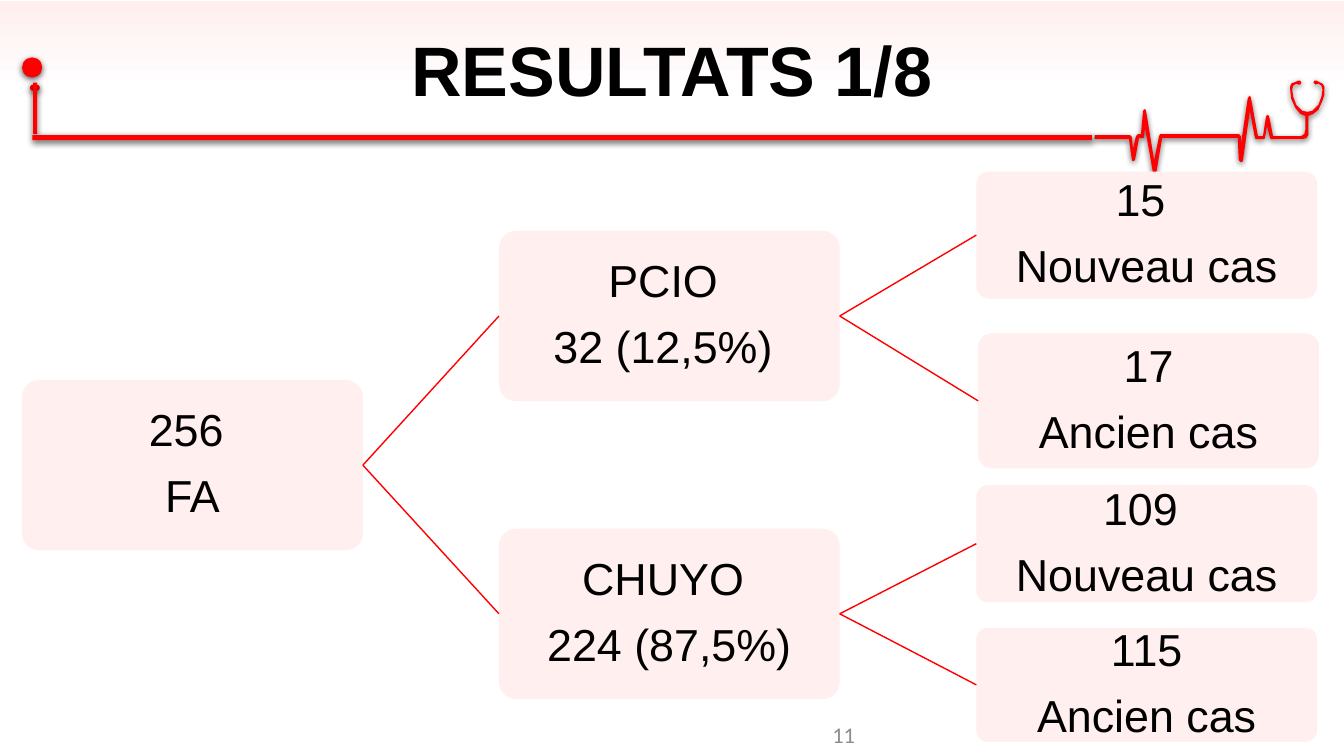
from lxml import etree
from pptx import Presentation
from pptx.dml.color import RGBColor
from pptx.enum.shapes import MSO_CONNECTOR, MSO_SHAPE
from pptx.enum.text import MSO_ANCHOR, PP_ALIGN
from pptx.oxml import parse_xml
from pptx.oxml.ns import nsdecls, qn
from pptx.util import Pt

RED = RGBColor(0xFF, 0x00, 0x00)
PINK = RGBColor(0xFF, 0xEF, 0xEF)
WHITE = RGBColor(0xFF, 0xFF, 0xFF)
BLACK = RGBColor(0x00, 0x00, 0x00)
GRAY = RGBColor(0x8C, 0x8C, 0x8C)

SHADOW = (
    f'<a:effectLst {nsdecls("a")}>'
    '<a:outerShdw blurRad="57150" dist="19050" dir="5400000" algn="ctr" rotWithShape="0">'
    '<a:srgbClr val="000000"><a:alpha val="63000"/></a:srgbClr>'
    '</a:outerShdw></a:effectLst>'
)

BOX_WIDTH = 243.4
BRANCH_HEIGHT = 121.7
BOXES = {
    "total": (15.8, 271.4, BRANCH_HEIGHT, "256 \nFA"),
    "pcio": (356.4, 164.9, BRANCH_HEIGHT, "PCIO \n32 (12,5%) "),
    "chuyo": (356.4, 377.6, BRANCH_HEIGHT, "CHUYO \n224 (87,5%)"),
    "pcio_new": (697.4, 122.6, 90.7, "15 \nNouveau cas"),
    "pcio_old": (698.7, 238.1, 96.5, "17\nAncien cas"),
    "chuyo_new": (697.4, 346.5, 83.7, "109 \nNouveau cas"),
    "chuyo_old": (697.4, 448.5, 81.4, "115\nAncien cas"),
}
BRANCHES = [
    ("total", "pcio"), ("total", "chuyo"),
    ("pcio", "pcio_new"), ("pcio", "pcio_old"),
    ("chuyo", "chuyo_new"), ("chuyo", "chuyo_old"),
]

HEARTBEAT_SCALE = 0.72
HEARTBEAT = [
    (1314, 89), (1314, 86), (1312, 83), (1308, 81), (1306, 80), (1304, 80.5),
    (1303, 82), (1305, 84), (1308, 83), (1311, 85), (1312, 89), (1311, 96),
    (1308, 104), (1305, 107), (1302, 110), (1297, 111), (1292, 110), (1288, 106),
    (1286, 104), (1283, 96), (1282, 89), (1283, 85), (1286, 83), (1288, 84),
    (1290, 83.5), (1291, 82), (1290, 80.5), (1288, 80), (1286, 81), (1281, 83),
    (1280, 86), (1280, 89), (1281, 98), (1285, 107), (1290, 113), (1295, 115),
    (1295, 129), (1294, 133), (1291, 135), (1263, 135), (1259, 115), (1257, 114),
    (1256, 116), (1253, 135), (1248, 135), (1241, 97), (1240, 95), (1239, 96),
    (1238, 97), (1231, 144), (1231, 135), (1229, 133), (1151, 133), (1150, 135),
    (1145, 159), (1137, 110), (1136, 108), (1135, 109), (1134, 110), (1132, 133),
    (1129, 133), (1127, 135), (1124, 148), (1123, 136), (1121, 134), (1086, 134),
    (1086, 138), (1120, 138), (1123, 159), (1124, 160), (1126, 159), (1130, 137),
    (1134, 137), (1135, 136), (1136, 127), (1144, 172), (1145, 174), (1147, 172),
    (1153, 137), (1228, 137), (1229, 159), (1231, 161), (1233, 160), (1240, 110),
    (1245, 137), (1246, 138), (1254, 138), (1255, 137), (1257, 125), (1260, 137),
    (1261, 138), (1292, 138), (1296, 137), (1298, 134), (1298, 115), (1303, 113),
    (1308, 109), (1312, 100), (1314, 94),
]


def fill_plain(shape, color):
    shape.shadow.inherit = False
    shape.fill.solid()
    shape.fill.fore_color.rgb = color
    shape.line.fill.background()


def format_text(paragraph, alignment, font_name, size, color, bold=False):
    paragraph.alignment = alignment
    for run in paragraph.runs:
        run.font.name = font_name
        run.font.size = Pt(size)
        run.font.color.rgb = color
        run.font.bold = bold


presentation = Presentation()
presentation.slide_width = Pt(960)
presentation.slide_height = Pt(540)
slide = presentation.slides.add_slide(presentation.slide_layouts[6])
shapes = slide.shapes

title = shapes.add_shape(MSO_SHAPE.RECTANGLE, 0, Pt(0.7), Pt(960), Pt(104.4))
title.shadow.inherit = False
title.line.fill.background()
title.fill.gradient()
title.fill.gradient_angle = 270
for stop, position, color in zip(title.fill.gradient_stops, (0, 0.63), (PINK, WHITE)):
    stop.position = position
    stop.color.rgb = color
title.text_frame.text = "RESULTATS 1/8"
title.text_frame.vertical_anchor = MSO_ANCHOR.MIDDLE
title_paragraph = title.text_frame.paragraphs[0]
title_paragraph.line_spacing = 0.9
format_text(title_paragraph, PP_ALIGN.CENTER, "Arial", 50, BLACK, True)

builder = shapes.build_freeform(*HEARTBEAT[0], scale=Pt(HEARTBEAT_SCALE))
builder.add_line_segments(HEARTBEAT[1:], close=True)
ornaments = [builder.convert_to_shape()]
for kind, left, top, width, height in [
    (MSO_SHAPE.OVAL, 15.8, 41, 14.4, 14.4),
    (MSO_SHAPE.ROUNDED_RECTANGLE, 21.4, 60.5, 7, 4.3),
    (MSO_SHAPE.RECTANGLE, 23.6, 59, 2.9, 36.7),
    (MSO_SHAPE.RECTANGLE, 23.2, 96.5, 756.7, 3.6),
]:
    ornament = shapes.add_shape(kind, Pt(left), Pt(top), Pt(width), Pt(height))
    if kind == MSO_SHAPE.ROUNDED_RECTANGLE:
        ornament.adjustments[0] = 0.5
    ornaments.append(ornament)
for ornament in ornaments:
    fill_plain(ornament, RED)
    properties = ornament.element.spPr
    properties.replace(properties.find(qn("a:effectLst")), parse_xml(SHADOW))

boxes = {}
for name, (left, top, height, text) in BOXES.items():
    box = shapes.add_shape(
        MSO_SHAPE.ROUNDED_RECTANGLE, Pt(left), Pt(top), Pt(BOX_WIDTH), Pt(height))
    box.adjustments[0] = 0.1
    fill_plain(box, PINK)
    frame = box.text_frame
    frame.margin_left = frame.margin_right = Pt(1.6)
    frame.margin_top = frame.margin_bottom = Pt(1.6)
    frame.vertical_anchor = MSO_ANCHOR.MIDDLE
    frame.text = text
    for paragraph in frame.paragraphs:
        paragraph.line_spacing = 0.9
        format_text(paragraph, PP_ALIGN.CENTER, "Arial", 32, BLACK)
    frame.paragraphs[0].space_after = Pt(12.6)
    boxes[name] = box

for parent, child in BRANCHES:
    branch = shapes.add_connector(MSO_CONNECTOR.STRAIGHT, 0, 0, 0, 0)
    branch.begin_connect(boxes[parent], 3)
    branch.end_connect(boxes[child], 1)
    branch.line.color.rgb = RED
    branch.line.width = Pt(1)
    etree.SubElement(branch.element.spPr, qn("a:effectLst"))

page_number = shapes.add_textbox(Pt(401.8), Pt(510.5), Pt(216), Pt(28.8))
page_number.text_frame.word_wrap = True
page_number.text_frame.vertical_anchor = MSO_ANCHOR.MIDDLE
page_number.text_frame.text = "11"
format_text(page_number.text_frame.paragraphs[0], PP_ALIGN.RIGHT, "Calibri", 16, GRAY)

presentation.save("out.pptx")
